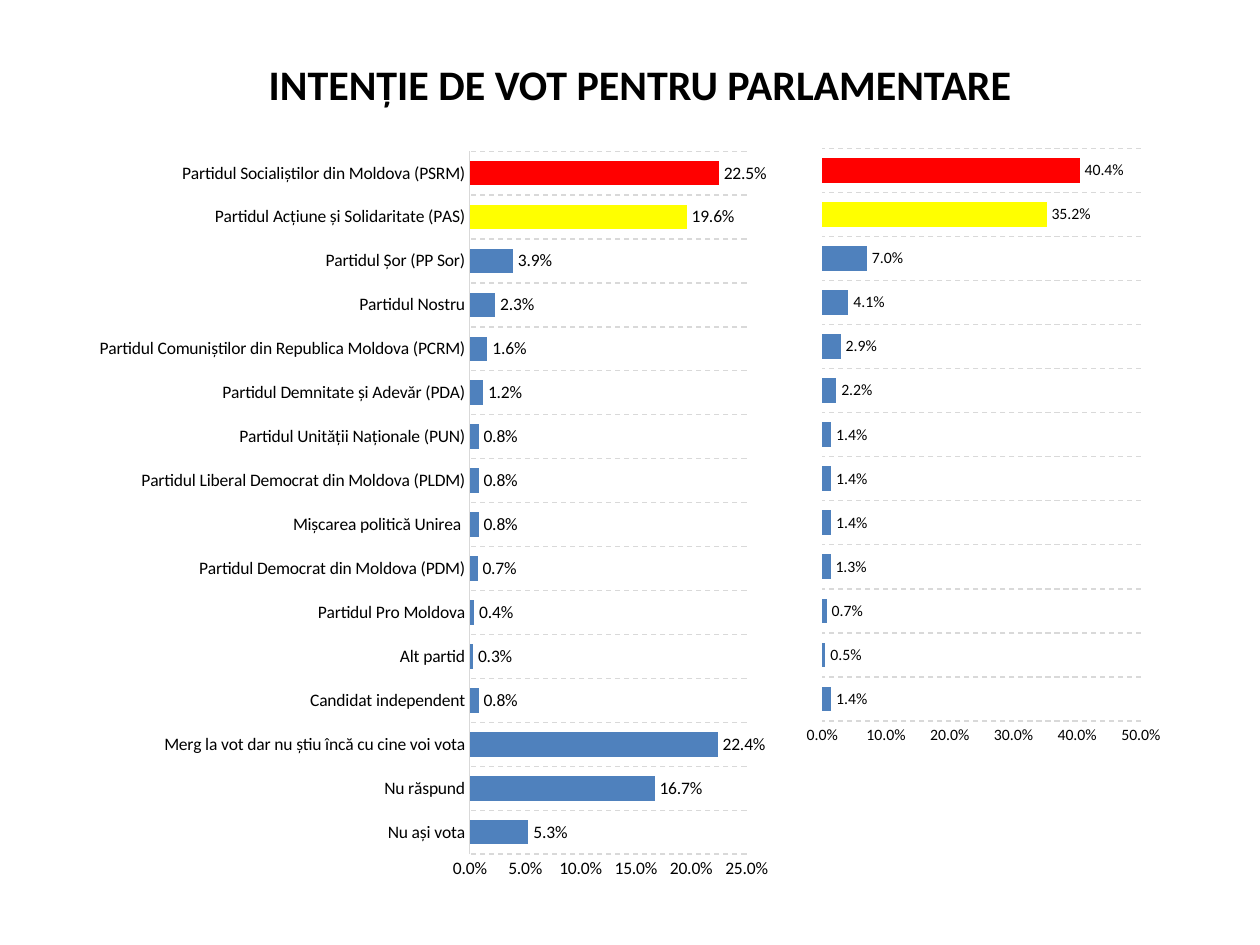
"""Build a slide with two bar charts of voting intention for parliament."""
from lxml import etree
from pptx import Presentation
from pptx.chart.data import CategoryChartData
from pptx.dml.color import RGBColor
from pptx.enum import chart as chart_enum, dml, text
from pptx.oxml.ns import qn
from pptx.util import Inches, Pt

COLORS = {"text": "000000", "bar": "4F81BD", "first": "FF0000",
          "second": "FFFF00", "grid": "D9D9D9"}
FONT = "Calibri"
PERCENT = "0.0%"

ALL_ANSWERS = [
    ("Nu ași vota", 0.053),
    ("Nu răspund", 0.167),
    ("Merg la vot dar nu știu încă cu cine voi vota", 0.224),
    ("Candidat independent", 0.008),
    ("Alt partid", 0.003),
    ("Partidul Pro Moldova", 0.004),
    ("Partidul Democrat din Moldova (PDM)", 0.007),
    ("Mișcarea politică Unirea ", 0.008),
    ("Partidul Liberal Democrat din Moldova (PLDM)", 0.008),
    ("Partidul Unității Naționale (PUN)", 0.008),
    ("Partidul Demnitate și Adevăr (PDA)", 0.012),
    ("Partidul Comuniștilor din Republica Moldova (PCRM)", 0.016),
    ("Partidul Nostru", 0.023),
    ("Partidul Șor (PP Sor)", 0.039),
    ("Partidul Acțiune și Solidaritate (PAS)", 0.196),
    ("Partidul Socialiștilor din Moldova (PSRM)", 0.225),
]
DECIDED_SHARES = [0.014, 0.005, 0.007, 0.013, 0.014, 0.014, 0.014,
                  0.022, 0.029, 0.041, 0.07, 0.352, 0.404]
DECIDED_VOTERS = [(str(number), share)
                  for number, share in enumerate(DECIDED_SHARES, 1)]


def rgb(name):
    return RGBColor.from_string(COLORS[name])


def set_font(font, size, bold=False):
    font.name = FONT
    font.size = Pt(size)
    font.bold = bold
    font.color.rgb = rgb("text")


def set_fill(part, name):
    part.format.fill.solid()
    part.format.fill.fore_color.rgb = rgb(name)


def set_line(line):
    line.color.rgb = rgb("grid")
    line.width = Pt(0.75)


def place_plot(chart, x, y, w, h):
    """Fix the inner plot area as fractions of the chart."""
    plot_area = chart.element.find(".//" + qn("c:plotArea"))
    for old_layout in plot_area.findall(qn("c:layout")):
        plot_area.remove(old_layout)
    layout = etree.Element(qn("c:layout"))
    manual = etree.SubElement(layout, qn("c:manualLayout"))
    settings = {"layoutTarget": "inner", "xMode": "edge", "yMode": "edge",
                "x": x, "y": y, "w": w, "h": h}
    for tag, value in settings.items():
        etree.SubElement(manual, qn("c:" + tag)).set("val", str(value))
    plot_area.insert(0, layout)


def format_axes(chart, size, maximum, step, show_categories):
    categories, values = chart.category_axis, chart.value_axis
    for axis in (categories, values):
        axis.major_tick_mark = chart_enum.XL_TICK_MARK.NONE
        axis.minor_tick_mark = chart_enum.XL_TICK_MARK.NONE
        set_font(axis.tick_labels.font, size)
    categories.visible = show_categories
    set_line(categories.format.line)
    categories.has_major_gridlines = True
    grid_line = categories.major_gridlines.format.line
    set_line(grid_line)
    grid_line.dash_style = dml.MSO_LINE.DASH
    values.has_major_gridlines = False
    values.format.line.fill.background()
    values.minimum_scale = 0
    values.maximum_scale = maximum
    values.major_unit = step
    values.tick_labels.number_format = PERCENT
    values.tick_labels.number_format_is_linked = False


def format_bars(plot, size):
    plot.gap_width = 78
    plot.vary_by_categories = False
    series = plot.series[0]
    set_fill(series, "bar")
    count = len(series.values)
    set_fill(series.points[count - 1], "first")
    set_fill(series.points[count - 2], "second")
    labels = series.data_labels
    labels.show_value = True
    labels.position = chart_enum.XL_LABEL_POSITION.OUTSIDE_END
    labels.number_format = PERCENT
    labels.number_format_is_linked = False
    set_font(labels.font, size)


def add_bar_chart(slide, rows, box, plot_box, size, maximum, step, show_categories):
    data = CategoryChartData(number_format=PERCENT)
    data.categories = [name for name, share in rows]
    data.add_series("Series 1", [share for name, share in rows])
    chart = slide.shapes.add_chart(
        chart_enum.XL_CHART_TYPE.BAR_CLUSTERED, *map(Inches, box), data).chart
    chart.has_title = False
    chart.has_legend = False
    set_font(chart.font, 10)
    format_axes(chart, size, maximum, step, show_categories)
    format_bars(chart.plots[0], size)
    place_plot(chart, *plot_box)


def set_title(slide, wording):
    title = slide.shapes.title
    title.left, title.top, title.width, title.height = map(
        Inches, (0.58, 0.25, 9, 0.83))
    frame = title.text_frame
    frame.text = wording
    frame.vertical_anchor = text.MSO_ANCHOR.MIDDLE
    paragraph = frame.paragraphs[0]
    paragraph.alignment = text.PP_ALIGN.CENTER
    set_font(paragraph.runs[0].font, 24, bold=True)


def main():
    presentation = Presentation()
    presentation.slide_width, presentation.slide_height = Inches(10), Inches(7.5)
    slide = presentation.slides.add_slide(presentation.slide_layouts[5])
    set_title(slide, "INTENȚIE DE VOT PENTRU PARLAMENTARE")
    add_bar_chart(slide, ALL_ANSWERS, (0.71, 1.08, 5.49, 6),
                  (0.55, 0.02, 0.4, 0.93), 10, 0.25, 0.05, True)
    add_bar_chart(slide, DECIDED_VOTERS, (6.35, 1.08, 2.94, 4.94),
                  (0.06, 0.02, 0.86, 0.92), 9, 0.5, 0.1, False)
    presentation.save("out.pptx")


if __name__ == "__main__":
    main()
